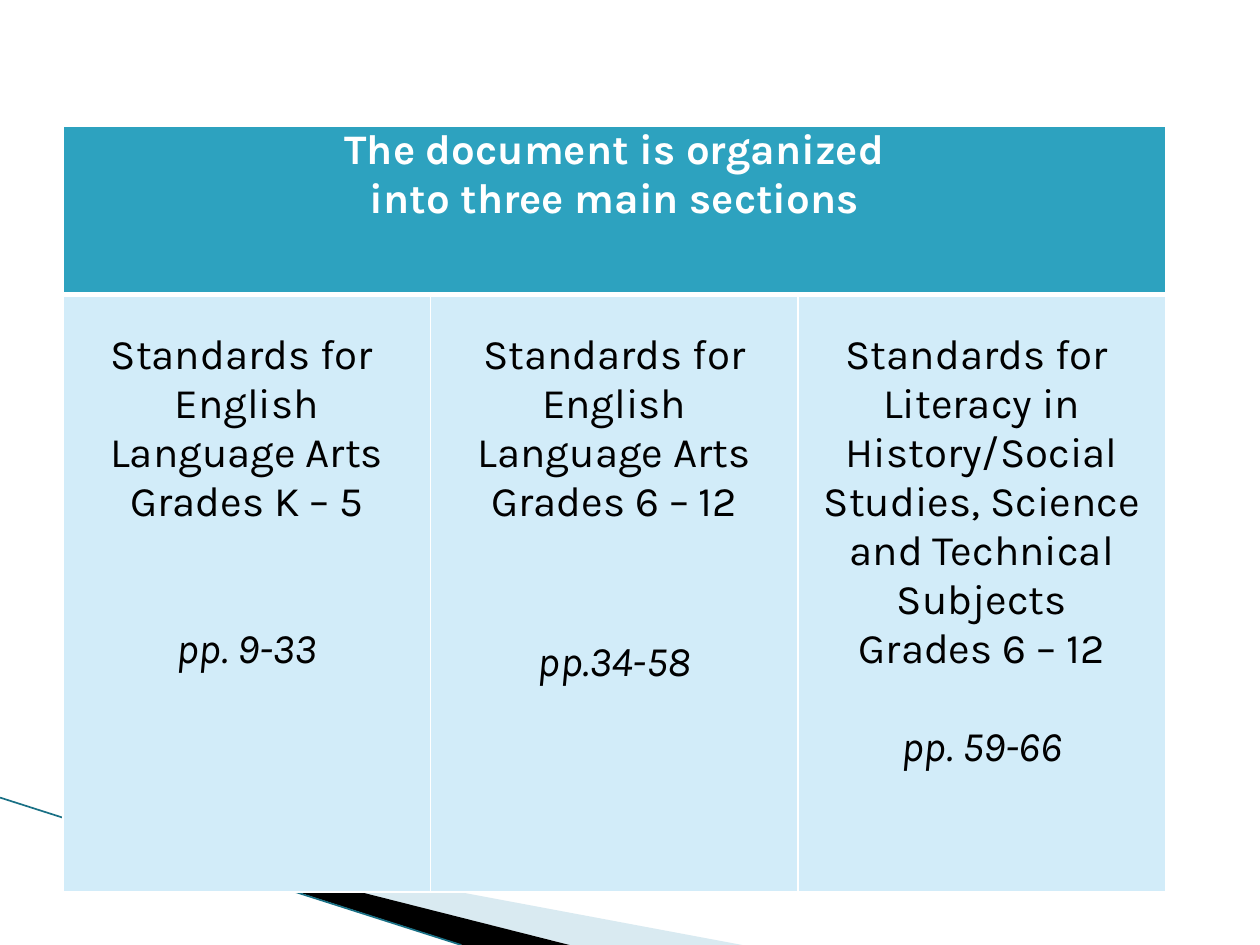
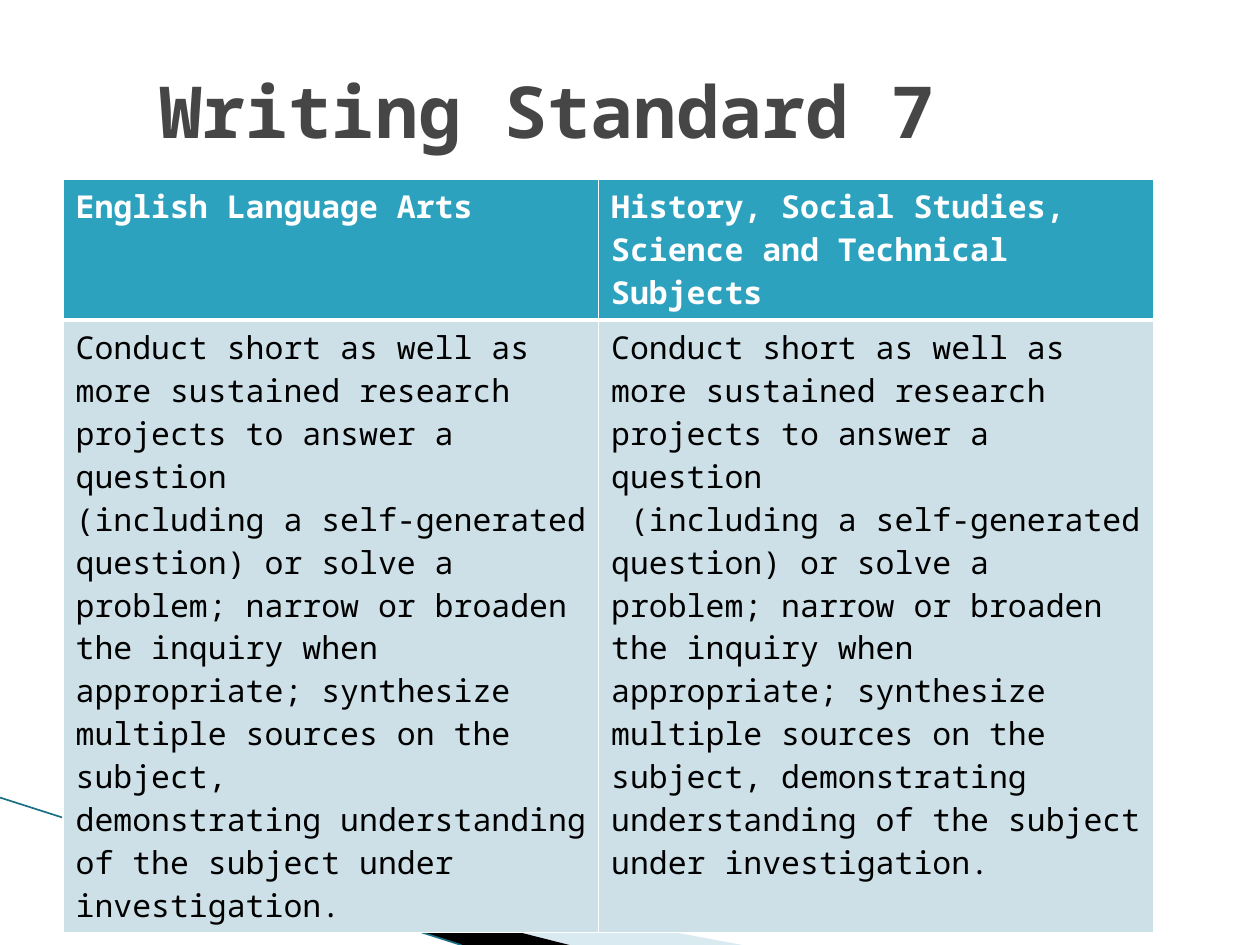
from dataclasses import dataclass

from lxml import etree
from pptx import Presentation
from pptx.dml.color import RGBColor
from pptx.enum import shapes, text
from pptx.oxml.ns import qn
from pptx.util import Inches, Pt

SECTIONS_HEADING = ["The document is organized", "into three main sections"]
# Lines of each section, its page range, and the gap in points above the range
SECTIONS = [
    (["Standards for ", "English", "Language Arts", "Grades K – 5"], "pp. 9-33", 56),
    (["Standards for", "English", "Language Arts", "Grades 6 – 12"], "pp.34-58", 63.5),
    (["Standards for ",
      "Literacy in History/Social Studies, Science and Technical Subjects",
      "Grades 6 – 12"], "pp. 59-66", 28),
]

STANDARD_TITLE = "Writing Standard 7"
STANDARD = [
    ("English Language Arts", [
        "Conduct short as well as more sustained research projects to answer a question",
        "(including a self-generated question) or solve a problem; narrow or broaden",
        "the inquiry when appropriate; synthesize multiple sources on the subject,",
        "demonstrating understanding of the subject under investigation."]),
    ("History, Social Studies, Science and Technical Subjects", [
        "Conduct short as well as more sustained research projects to answer a question",
        " (including a self-generated",
        "question) or solve a problem; narrow or broaden the inquiry when appropriate; synthesize",
        "multiple sources on the subject, demonstrating understanding of the subject under "
        "investigation."]),
]


@dataclass(frozen=True)
class Theme:
    sans: str = "Karla"
    mono: str = "Noto Sans Mono"
    title: str = "464646"
    header: str = "2DA2BF"
    section: str = "D2ECF9"
    standard: str = "CDE0E8"
    white: str = "FFFFFF"
    black: str = "000000"
    wedge: str = "A0CBDC"
    wedge_alpha: int = 40
    edge: str = "197085"
    title_size: int = 41
    section_size: int = 24
    standard_size: int = 18
    rule: int = 1
    header_rule: int = 3


T = Theme()
WEDGE = [(0.55, 6.5), (5.89, 7.5), (4.52, 7.5)]
BAND = [(0.53, 6.49), (4.52, 7.5), (3.67, 7.5)]
EDGE = [(0, 6.33), (3.66, 7.5)]


def rgb(value):
    return RGBColor.from_string(value)


def polygon(s, points, color, alpha=100):
    start, *rest = [(Inches(x), Inches(y)) for x, y in points]
    builder = s.shapes.build_freeform(*start)
    builder.add_line_segments(rest, close=True)
    sp = builder.convert_to_shape()
    sp.shadow.inherit = False
    sp.line.fill.background()
    sp.fill.solid()
    sp.fill.fore_color.rgb = rgb(color)
    if alpha < 100:
        clr = sp._element.spPr.find(".//" + qn("a:srgbClr"))
        etree.SubElement(clr, qn("a:alpha"), val=str(alpha * 1000))


def new_slide(prs):
    """Add a blank slide with the wedges in its lower left corner."""
    s = prs.slides.add_slide(prs.slide_layouts[6])
    polygon(s, WEDGE, T.wedge, T.wedge_alpha)
    polygon(s, BAND, T.black)
    ends = [Inches(v) for point in EDGE for v in point]
    edge = s.shapes.add_connector(shapes.MSO_CONNECTOR.STRAIGHT, *ends)
    edge.line.color.rgb = rgb(T.edge)
    edge.line.width = Pt(0.95)
    etree.SubElement(edge._element.spPr, qn("a:effectLst"))
    return s


def write(tf, lines, font, size, color, bold=False, align=text.PP_ALIGN.LEFT):
    tf.text = "\n".join(lines)
    for p in tf.paragraphs:
        p.alignment = align
        for r in p.runs:
            r.font.name, r.font.size, r.font.bold = font, Pt(size), bold
            r.font.color.rgb = rgb(color)


def set_borders(cell, **widths):
    tc_pr = cell._tc.get_or_add_tcPr()
    for i, side in enumerate("LRTB"):
        ln = etree.Element(qn("a:ln" + side), w=str(Pt(widths.get(side, T.rule))))
        fill = etree.SubElement(ln, qn("a:solidFill"))
        etree.SubElement(fill, qn("a:srgbClr"), val=T.white)
        tc_pr.insert(i, ln)


def add_table(s, left, top, widths, heights, body_fill):
    """Add a table with one header row above one body row."""
    frame = s.shapes.add_table(len(heights), len(widths), Inches(left), Inches(top),
                               Inches(sum(widths)), Inches(sum(heights)))
    table = frame.table
    table.horz_banding = False
    for column, width in zip(table.columns, widths):
        column.width = Inches(width)
    for row, height in zip(table.rows, heights):
        row.height = Inches(height)
    looks = [(T.header, {"B": T.header_rule}), (body_fill, {"T": T.header_rule})]
    for row, (fill, rules) in zip(table.rows, looks):
        for cell in row.cells:
            cell.fill.solid()
            cell.fill.fore_color.rgb = rgb(fill)
            set_borders(cell, **rules)
    return table


def sections_slide(prs):
    s = new_slide(prs)
    n = len(SECTIONS)
    table = add_table(s, 0.5, 1, [8.75 / n] * n, [1.34, 4.74], T.section)
    heading = table.cell(0, 0)
    heading.merge(table.cell(0, n - 1))
    for row in table.rows:
        for cell in row.cells:
            cell.margin_left = cell.margin_right = cell.margin_top = cell.margin_bottom = 0
    center = text.PP_ALIGN.CENTER
    write(heading.text_frame, SECTIONS_HEADING, T.sans, T.section_size, T.white, True, center)
    for col, (lines, pages, gap) in enumerate(SECTIONS):
        cell = table.cell(1, col)
        cell.margin_top = Inches(0.29)
        tf = cell.text_frame
        write(tf, lines + [pages], T.sans, T.section_size, T.black, align=center)
        p = tf.paragraphs[-1]
        p.space_before = Pt(gap)
        p.runs[0].font.italic = True


def standard_slide(prs):
    s = new_slide(prs)
    title = s.shapes.add_textbox(Inches(1.17), Inches(0.25), Inches(7.68), Inches(1.25))
    tf = title.text_frame
    tf.word_wrap = True
    tf.vertical_anchor = text.MSO_ANCHOR.MIDDLE
    write(tf, [STANDARD_TITLE], T.mono, T.title_size, T.title, True)
    table = add_table(s, 0.5, 1.42, [4.25, 4.41], [1.12, 4.86], T.standard)
    for col, (subject, lines) in enumerate(STANDARD):
        write(table.cell(0, col).text_frame, [subject], T.mono, T.standard_size, T.white, True)
        write(table.cell(1, col).text_frame, lines, T.mono, T.standard_size, T.black)


def main():
    prs = Presentation()
    prs.slide_width, prs.slide_height = Inches(10), Inches(7.5)
    sections_slide(prs)
    standard_slide(prs)
    prs.save("out.pptx")


if __name__ == "__main__":
    main()
